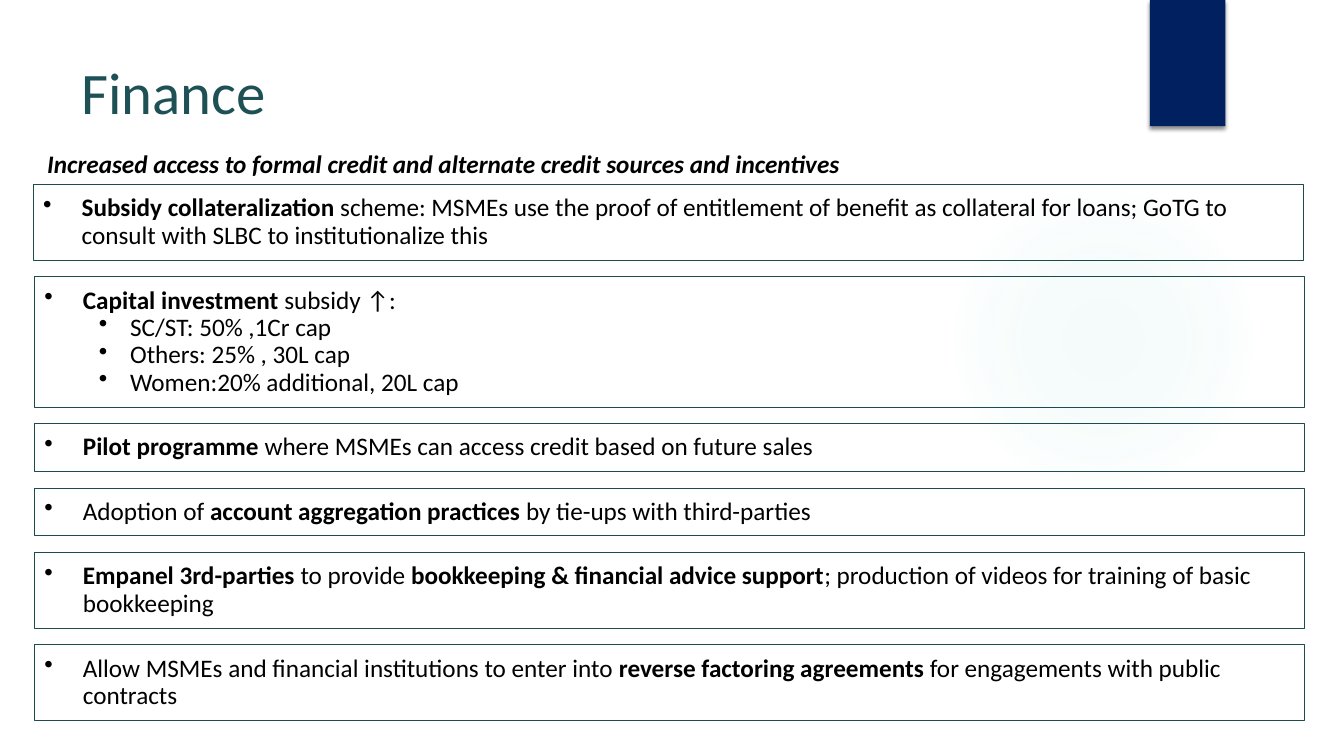
from dataclasses import dataclass

import pptx
import pptx.dml.color
import pptx.enum.shapes
import pptx.enum.text
import pptx.oxml
import pptx.oxml.ns
import pptx.presentation
import pptx.shapes.autoshape
import pptx.slide
import pptx.text.text
import pptx.util
from pptx.util import Cm

COLORS = {"title": "1E5155", "text": "000000", "line": "1C4D4A",
          "tab": "002060", "glow": "7CCEC9"}
FONT = "Calibri"
NS = pptx.oxml.ns.nsdecls("a")


@dataclass
class Panel:
    """Framed box; ** marks bold text, and later lines are sub-bullets."""
    height: float
    lines: list[str]
    left: float = 0.87


@dataclass
class Label:
    left: float
    top: float
    width: float
    height: float
    text: str
    size: int
    color: str
    strong: bool = False


PANELS = [
    Panel(1.91, ["**Subsidy collateralization** scheme: MSMEs use the proof of entitlement "
                 "of benefit as collateral for loans; GoTG to consult with SLBC to "
                 "institutionalize this"], left=0.84),
    Panel(3.28, ["**Capital investment **subsidy ↑:", "SC/ST: 50% ,1Cr cap",
                 "Others: 25% , 30L cap", "Women:20% additional, 20L cap"]),
    Panel(1.2, ["**Pilot programme **where MSMEs can access credit based on future sales"]),
    Panel(1.2, ["Adoption of **account aggregation practices **by tie-ups with third-parties"]),
    Panel(1.91, ["**Empanel 3rd-parties **to provide **bookkeeping & financial advice "
                 "support**; production of videos for training of basic bookkeeping"]),
    Panel(1.91, ["Allow MSMEs and financial institutions to enter into **reverse factoring "
                 "agreements **for engagements with public contracts"]),
]
TOP, GAP, WIDTH = 4.65, 0.42, 32.0

LABELS = [
    Label(1.8, 1.27, 26.14, 3.89, "Finance", 42, "title"),
    Label(0.94, 3.61, 23.6, 1.02, "Increased access to formal credit and alternate "
          "credit sources and incentives", 18, "text", strong=True),
]


def rgb(name: str) -> pptx.dml.color.RGBColor:
    return pptx.dml.color.RGBColor.from_string(COLORS[name])


def style(font: pptx.text.text.Font, size: int, color: str) -> None:
    font.name, font.size = FONT, pptx.util.Pt(size)
    font.color.rgb = rgb(color)


def draw_shape(slide: pptx.slide.Slide, kind: pptx.enum.shapes.MSO_SHAPE, left: float,
               top: float, width: float, height: float) -> pptx.shapes.autoshape.Shape:
    shape = slide.shapes.add_shape(kind, Cm(left), Cm(top), Cm(width), Cm(height))
    shape.shadow.inherit = False
    shape.fill.background()
    shape.line.fill.background()
    return shape


def draw_glow(slide: pptx.slide.Slide) -> None:
    oval = draw_shape(slide, pptx.enum.shapes.MSO_SHAPE.OVAL, 23.9, 4.65, 7.82, 7.82)
    stops = "".join(
        f'<a:gs pos="{pos}000"><a:srgbClr val="{COLORS["glow"]}">'
        f'<a:alpha val="{alpha}000"/></a:srgbClr></a:gs>'
        for pos, alpha in ((0, 7), (36, 6), (69, 0)))
    fill = pptx.oxml.parse_xml(
        f'<a:gradFill {NS}><a:gsLst>{stops}</a:gsLst><a:path path="circle">'
        '<a:fillToRect l="50000" t="50000" r="50000" b="50000"/></a:path></a:gradFill>')
    props = oval.element.spPr
    props.replace(props.find(pptx.oxml.ns.qn("a:noFill")), fill)


def draw_tab(slide: pptx.slide.Slide) -> None:
    tab = draw_shape(slide, pptx.enum.shapes.MSO_SHAPE.RECTANGLE, 28.98, 0, 1.9, 3.18)
    tab.fill.solid()
    tab.fill.fore_color.rgb = rgb("tab")
    shade = pptx.oxml.parse_xml(
        f'<a:outerShdw {NS} blurRad="38100" dist="25400" dir="5400000" rotWithShape="0">'
        '<a:srgbClr val="000000"><a:alpha val="45000"/></a:srgbClr></a:outerShdw>')
    tab.element.spPr.find(pptx.oxml.ns.qn("a:effectLst")).append(shade)


def draw_label(slide: pptx.slide.Slide, label: Label) -> None:
    box = slide.shapes.add_textbox(Cm(label.left), Cm(label.top),
                                   Cm(label.width), Cm(label.height))
    frame = box.text_frame
    frame.word_wrap = True
    frame.text = label.text
    font = frame.paragraphs[0].runs[0].font
    style(font, label.size, label.color)
    font.bold = font.italic = label.strong


def fill_line(para: pptx.text.text._Paragraph, text: str, level: int) -> None:
    indent, hang = ((0.97, 0.97), (2.16, 0.79))[level]
    props = para._p.get_or_add_pPr()
    props.set("marL", str(Cm(indent)))
    props.set("indent", str(-Cm(hang)))
    props.append(pptx.oxml.parse_xml(
        f'<a:buClr {NS}><a:srgbClr val="{COLORS["text"]}"/></a:buClr>'))
    props.append(pptx.oxml.parse_xml(f'<a:buChar {NS} char="•"/>'))
    para.level = level
    para.line_spacing = 0.9
    para.alignment = pptx.enum.text.PP_ALIGN.LEFT
    for spot, part in enumerate(text.split("**")):
        if part:
            run = para.add_run()
            run.text = part
            style(run.font, 18, "text")
            run.font.bold = spot % 2 == 1


def draw_panel(slide: pptx.slide.Slide, panel: Panel, top: float) -> None:
    box = draw_shape(slide, pptx.enum.shapes.MSO_SHAPE.RECTANGLE,
                     panel.left, top, WIDTH, panel.height)
    box.line.color.rgb = rgb("line")
    box.line.width = pptx.util.Pt(0.75)
    frame = box.text_frame
    frame.word_wrap = True
    frame.auto_size = pptx.enum.text.MSO_AUTO_SIZE.SHAPE_TO_FIT_TEXT
    frame.vertical_anchor = pptx.enum.text.MSO_ANCHOR.MIDDLE
    frame.margin_left = frame.margin_right = Cm(0.25)
    frame.margin_top = frame.margin_bottom = Cm(0.25)
    for row, text in enumerate(panel.lines):
        para = frame.add_paragraph() if row else frame.paragraphs[0]
        fill_line(para, text, min(row, 1))


def main() -> None:
    deck = pptx.Presentation()
    deck.slide_width, deck.slide_height = Cm(33.87), Cm(19.05)
    slide = deck.slides.add_slide(deck.slide_layouts[6])

    # Backdrop
    draw_glow(slide)
    draw_tab(slide)

    # Headings
    for label in LABELS:
        draw_label(slide, label)

    # Stack of framed points
    top = TOP
    for panel in PANELS:
        draw_panel(slide, panel, top)
        top += panel.height + GAP

    deck.save("out.pptx")


if __name__ == "__main__":
    main()
